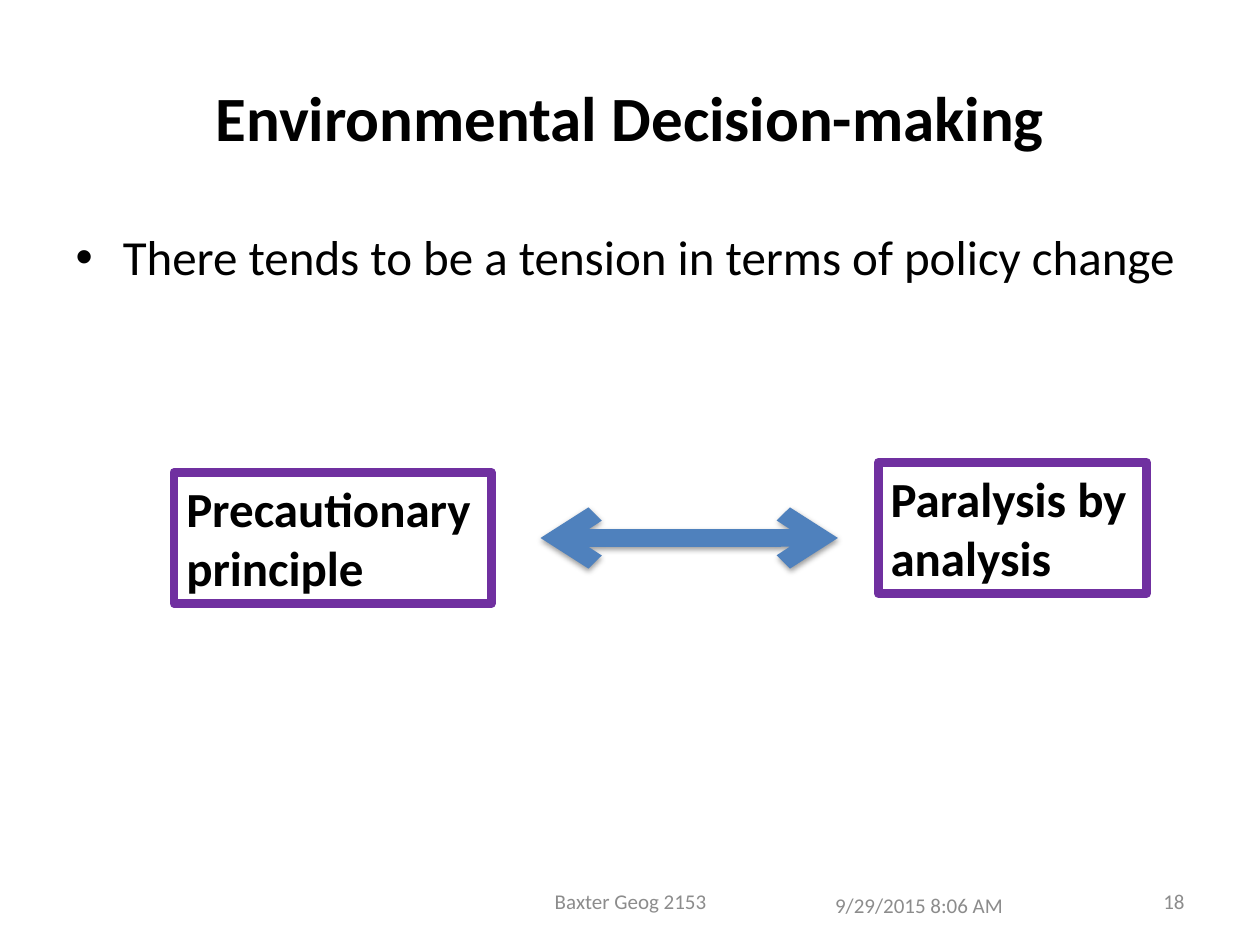
"""Build the slide on tension in environmental decision-making."""
from dataclasses import dataclass

from lxml.etree import SubElement
from pptx import Presentation
from pptx.dml.color import RGBColor
from pptx.enum.shapes import MSO_CONNECTOR as Connector, MSO_SHAPE as Shape
from pptx.enum.text import MSO_ANCHOR as Anchor, PP_ALIGN as Align
from pptx.oxml.ns import qn
from pptx.util import Inches, Pt

TITLE = ("Environmental Decision-making", (0.5, 0.3, 9, 1.25))
BULLET = ("There tends to be a tension in terms of policy change", (0.5, 1.75, 9, 1.13))
FOOTERS = [
    ("9/29/2015 8:06 AM", (6.53, 6.98, 2.33, 0.4), Align.LEFT),
    ("Baxter Geog 2153", (3.42, 6.95, 3.17, 0.4), Align.CENTER),
    ("18", (7.17, 6.95, 2.33, 0.4), Align.RIGHT),
]
POSITIONS = [
    ("Precautionary principle", (1.38, 3.75, 2.52, 1.04)),
    ("Paralysis by analysis", (6.97, 3.67, 2.13, 1.04)),
]
TENSION = (4.29, 4.27, 6.65, 4.27)


@dataclass(frozen=True)
class Theme:
    font: str = "Calibri"
    text: str = "000000"
    muted: str = "8C8C8C"
    border: str = "7030A0"
    arrow: str = "4F81BD"
    title_size: int = 36
    body_size: int = 28
    footer_size: int = 12
    border_width: int = 5
    arrow_width: int = 10


THEME = Theme()


def inches(values):
    return [Inches(value) for value in values]


def place(part, box):
    part.left, part.top, part.width, part.height = inches(box)


def write(part, text, size, align=Align.LEFT, anchor=Anchor.TOP, color=THEME.text, bold=False):
    frame = part.text_frame
    frame.word_wrap = True
    frame.vertical_anchor = anchor
    paragraph = frame.paragraphs[0]
    paragraph.alignment = align
    run = paragraph.add_run()
    run.text = text
    run.font.name = THEME.font
    run.font.size = Pt(size)
    run.font.bold = bold
    run.font.color.rgb = RGBColor.from_string(color)


def set_line(part, color, width):
    part.line.color.rgb = RGBColor.from_string(color)
    part.line.width = Pt(width)
    return part.line._get_or_add_ln()


def add_position(slide, text, box):
    position = slide.shapes.add_shape(Shape.RECTANGLE, *inches(box))
    position.shadow.inherit = False
    position.fill.background()
    outline = set_line(position, THEME.border, THEME.border_width)
    SubElement(outline, qn("a:round"))
    write(position, text, THEME.body_size, bold=True)


def add_tension(slide):
    tension = slide.shapes.add_connector(Connector.STRAIGHT, *inches(TENSION))
    outline = set_line(tension, THEME.arrow, THEME.arrow_width)
    for end in ("a:headEnd", "a:tailEnd"):
        SubElement(outline, qn(end), type="arrow")
    effects = SubElement(tension._element.spPr, qn("a:effectLst"))
    shadow = SubElement(effects, qn("a:outerShdw"), blurRad=str(Pt(3.1)),
                        dist=str(Pt(1.6)), dir="5400000", rotWithShape="0")
    shade = SubElement(shadow, qn("a:srgbClr"), val=THEME.text)
    SubElement(shade, qn("a:alpha"), val="38000")


def main():
    deck = Presentation()
    deck.slide_width, deck.slide_height = inches((10, 7.5))
    slide = deck.slides.add_slide(deck.slide_layouts[1])

    heading, heading_box = TITLE
    place(slide.shapes.title, heading_box)
    write(slide.shapes.title, heading, THEME.title_size, Align.CENTER, Anchor.MIDDLE, bold=True)

    point, point_box = BULLET
    body = slide.placeholders[1]
    place(body, point_box)
    write(body, point, THEME.body_size)

    for text, box, align in FOOTERS:
        footer = slide.shapes.add_textbox(*inches(box))
        write(footer, text, THEME.footer_size, align, Anchor.MIDDLE, THEME.muted)

    for text, box in POSITIONS:
        add_position(slide, text, box)
    add_tension(slide)

    deck.save("out.pptx")


if __name__ == "__main__":
    main()
